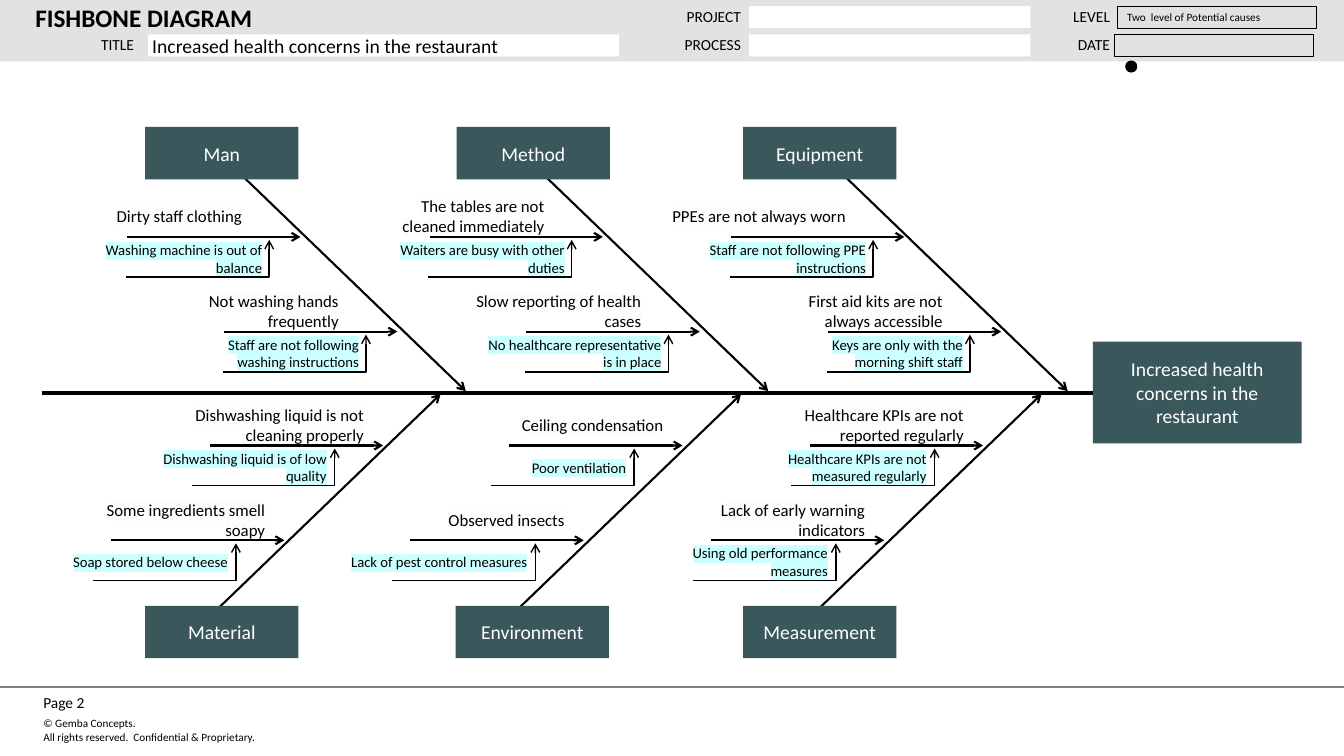
from lxml import etree
from pptx import Presentation, util as u
from pptx.dml.color import RGBColor
from pptx.enum import shapes, text
from pptx.oxml.ns import qn

PX = 9144  # 100 px to the inch
W, H = 1333, 750
FONT, BLACK, WHITE = "Calibri", "000000", "FFFFFF"
BANNER, TEAL, GREY = "E2E2E2", "3A575B", "808080"
CAUSE_HL, ROOT_HL = "FDFDFD", "CCFFFF"
LEFT, CENTER, RIGHT = text.PP_ALIGN.LEFT, text.PP_ALIGN.CENTER, text.PP_ALIGN.RIGHT
TOP, MIDDLE = text.MSO_ANCHOR.TOP, text.MSO_ANCHOR.MIDDLE

# Content
TITLE = "FISHBONE DIAGRAM"
EFFECT = "Increased health concerns in the restaurant"
# label, x, y, width
LABELS = [
    ("DATE", 1024, 33, 81), ("PROCESS", 625, 33, 114), ("LEVEL", 1024, 5, 81),
    ("PROJECT", 625, 5, 114), ("TITLE", 15, 33, 122),
]
# text, x, y, width, fill, line, size, inset
FIELDS = [
    (EFFECT, 147, 34, 467, WHITE, None, 14, 4),
    ("", 743, 34, 279, WHITE, None, 14, 4),
    ("", 743, 6, 279, WHITE, None, 14, 4),
    ("", 1105, 34, 198, None, BLACK, 8, 10),
    ("Two  level of Potential causes", 1108, 6, 198, None, BLACK, 8, 10),
]
# category, box x, bone tip x, first rail end x, [(cause, root cause)]
UPPER = [
    ("Equipment", 737, 1059, 897, [
        ("PPEs are not always worn", "Staff are not following PPE instructions"),
        ("First aid kits are not always accessible", "Keys are only with the morning shift staff")]),
    ("Method", 453, 762, 598, [
        ("The tables are not cleaned immediately", "Waiters are busy with other duties"),
        ("Slow reporting of health cases", "No healthcare representative is in place")]),
    ("Man", 144, 462, 298, [
        ("Dirty staff clothing", "Washing machine is out of balance"),
        ("Not washing hands frequently", "Staff are not following washing instructions")]),
]
LOWER = [
    ("Measurement", 737, 1033, 975, [
        ("Healthcare KPIs are not reported regularly", "Healthcare KPIs are not measured regularly"),
        ("Lack of early warning indicators", "Using old performance measures")]),
    ("Environment", 452, 735, 677, [
        ("Ceiling condensation", "Poor ventilation"),
        ("Observed insects", "Lack of pest control measures")]),
    ("Material", 144, 437, 380, [
        ("Dishwashing liquid is not cleaning properly", "Dishwashing liquid is of low quality"),
        ("Some ingredients smell soapy", "Soap stored below cheese")]),
]
# Geometry of each half; the last three are offsets back from a rail's end
HALVES = [
    dict(bones=UPPER, box_y=126, tip_y=388, foot_y=176, rail_y=235, step_x=96,
         cause=55, root=35, elbow=31),
    dict(bones=LOWER, box_y=601, tip_y=391, foot_y=603, rail_y=442, step_x=-98,
         cause=16, root=53, elbow=48),
]
BONE_RUN, RAIL_W, RAIL_STEP = 220, 172, 94
NOTE_W, NOTE_H, ELBOW_W = 184, 43, 142
COPYRIGHT = "© Gemba Concepts.\nAll rights reserved.  Confidential & Proprietary."


def px(*lengths):
    return [u.Emu(n * PX) for n in lengths]


def rgb(value):
    return RGBColor.from_string(value)


def write(sp, words, size, color=BLACK, align=LEFT, anchor=MIDDLE, inset=4,
          bold=False, highlight=None):
    tf = sp.text_frame
    tf.word_wrap = True
    tf.auto_size = text.MSO_AUTO_SIZE.NONE
    tf.vertical_anchor = anchor
    tf.margin_left = tf.margin_right = u.Emu(inset * PX)
    tf.margin_top = tf.margin_bottom = u.Emu(min(inset, 5) * PX)
    tf.text = words
    for p in tf.paragraphs:
        p.alignment = align
        p.font.name, p.font.size, p.font.bold = FONT, u.Pt(size), bold
        p.font.color.rgb = rgb(color)
        if highlight:
            for r in p.runs:
                mark = etree.SubElement(r.font._element, qn("a:highlight"))
                etree.SubElement(mark, qn("a:srgbClr"), val=highlight)


def textbox(words, x, y, w, h, size, **style):
    write(s.shapes.add_textbox(*px(x, y, w, h)), words, size, **style)


def block(x, y, w, h, fill=None, line=None, kind=shapes.MSO_SHAPE.RECTANGLE):
    sp = s.shapes.add_shape(kind, *px(x, y, w, h))
    sp.shadow.inherit = False
    if fill:
        sp.fill.solid()
        sp.fill.fore_color.rgb = rgb(fill)
    else:
        sp.fill.background()
    if line:
        sp.line.color.rgb = rgb(line)
        sp.line.width = u.Pt(0.75)
    else:
        sp.line.fill.background()
    return sp


def line(x1, y1, x2, y2, width, color=BLACK, arrow=None, elbow=False):
    kind = shapes.MSO_CONNECTOR.ELBOW if elbow else shapes.MSO_CONNECTOR.STRAIGHT
    cx = s.shapes.add_connector(kind, *px(x1, y1, x2, y2))
    cx.line.color.rgb = rgb(color)
    cx.line.width = u.Pt(width)
    pr = cx.element.spPr
    if arrow:
        etree.SubElement(pr.find(qn("a:ln")), qn(f"a:{arrow}End"), type="arrow")
    etree.SubElement(pr, qn("a:effectLst"))
    if elbow:  # turn straight down at the start
        geom = pr.find(qn("a:prstGeom"))
        guides = geom.find(qn("a:avLst"))
        if guides is None:
            guides = etree.SubElement(geom, qn("a:avLst"))
        etree.SubElement(guides, qn("a:gd"), name="adj1", fmla="val 0")


prs = Presentation()
prs.slide_width, prs.slide_height = px(W, H)
s = prs.slides.add_slide(prs.slide_layouts[5])

# Footer
line(0, 682, W, 682, 1.5, GREY)
textbox(COPYRIGHT, 37, 706, 431, 39, 8, anchor=TOP, inset=6)
textbox("Page 2", 37, 682, 94, 30, 11, inset=6)

# Header band, with the title raised above it
block(0, 0, W, 61, BANNER)
title = s.shapes.title
title.element.getparent().append(title.element)
title.left, title.top, title.width, title.height = px(31, 0, 579, 34)
write(title, TITLE, 18, bold=True)
for label, x, y, w in LABELS:
    textbox(label, x, y, w, 23, 11, align=RIGHT)
for words, x, y, w, fill, edge, size, inset in FIELDS:
    field = block(x, y, w, 22, fill, edge)
    if words:
        write(field, words, size, inset=inset)
block(1116, 60, 12, 12, BLACK, kind=shapes.MSO_SHAPE.OVAL)

# Effect and spine
write(block(1084, 339, 207, 101, TEAL), EFFECT, 14, WHITE, CENTER, inset=10)
line(1084, 390, 42, 390, 3)

# Bones with their causes and root causes
for half in HALVES:
    for category, box_x, tip_x, rail_x, causes in half["bones"]:
        line(tip_x - BONE_RUN, half["foot_y"], tip_x, half["tip_y"], 1.5, arrow="tail")
        write(block(box_x, half["box_y"], 152, 52, TEAL), category, 14, WHITE, CENTER, inset=8)
        for i, (cause, root) in enumerate(causes):
            end = rail_x + i * half["step_x"]
            y = half["rail_y"] + i * RAIL_STEP
            textbox(cause, end - half["cause"] - NOTE_W, y - 42, NOTE_W, NOTE_H, 12,
                    align=RIGHT, inset=3, highlight=CAUSE_HL)
            line(end - RAIL_W, y, end, y, 1.5, arrow="tail")
            textbox(root, end - half["root"] - NOTE_W, y, NOTE_W, NOTE_H, 10.5,
                    align=RIGHT, inset=3, highlight=ROOT_HL)
            elbow_x = end - half["elbow"]
            line(elbow_x, y + 3, elbow_x - ELBOW_W, y + 40, 1, arrow="head", elbow=True)

prs.save("out.pptx")
